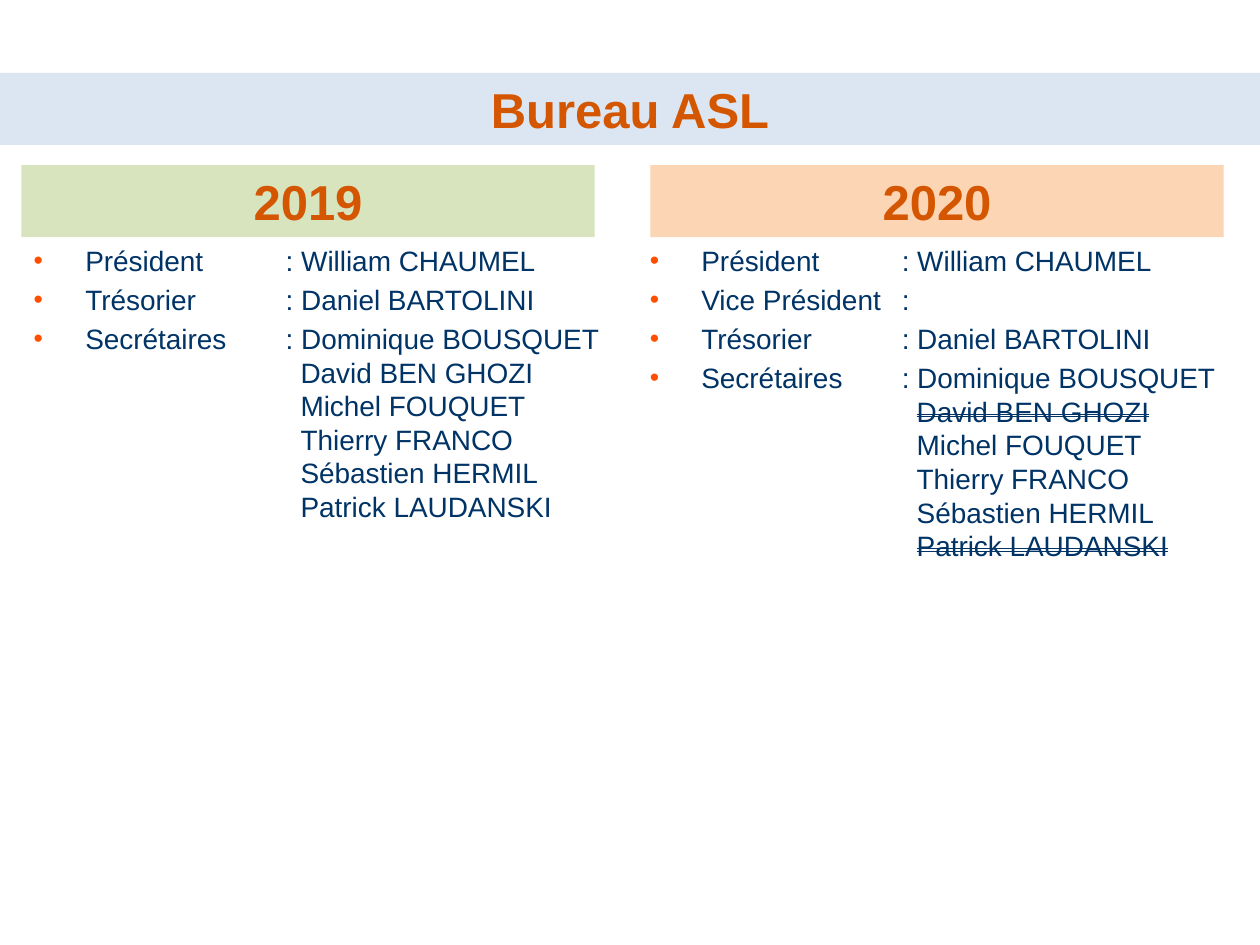
"""Build the slide that sets the 2019 and 2020 ASL boards side by side."""
import dataclasses

import pptx
import pptx.dml.color
import pptx.enum.shapes
import pptx.enum.text
import pptx.oxml
import pptx.oxml.ns
import pptx.util

Cm = pptx.util.Cm
Pt = pptx.util.Pt
Rgb = pptx.dml.color.RGBColor.from_string


@dataclasses.dataclass(frozen=True)
class Theme:
    font: str = "Arial"
    head: str = "D45600"
    body: str = "003366"
    dot: str = "FF4E00"
    blue: str = "DCE6F2"
    green: str = "D7E4BD"
    peach: str = "FCD5B5"
    big: int = 28
    small: int = 16


theme = Theme()


def style(para, size, color, bold=False):
    for run in para.runs:
        run.font.name = theme.font
        run.font.size = Pt(size)
        run.font.bold = bold
        run.font.color.rgb = Rgb(color)


def banner(text, left, top, width, fill):
    shape = slide.shapes.add_shape(
        pptx.enum.shapes.MSO_SHAPE.RECTANGLE, Cm(left), Cm(top), Cm(width), Cm(1.45))
    shape.shadow.inherit = False
    shape.fill.solid()
    shape.fill.fore_color.rgb = Rgb(fill)
    shape.line.fill.background()
    shape.text_frame.text = text
    para = shape.text_frame.paragraphs[0]
    para.alignment = pptx.enum.text.PP_ALIGN.CENTER
    style(para, theme.big, theme.head, True)


deck = pptx.Presentation()
deck.slide_width, deck.slide_height = Cm(25.4), Cm(19.05)
slide = deck.slides.add_slide(deck.slide_layouts[6])

banner("Bureau ASL", 0, 1.47, 25.4, theme.blue)

chair = "Président\t: William CHAUMEL"
vice = "Vice Président\t:"
purse = "Trésorier\t: Daniel BARTOLINI"
clerk = "Secrétaires\t: Dominique BOUSQUET"
team = ["David BEN GHOZI", "Michel FOUQUET", "Thierry FRANCO",
        "Sébastien HERMIL", "Patrick LAUDANSKI"]
boards = [
    ("2019", 0.43, 0.43, 6.15, theme.green, [chair, purse, clerk], []),
    ("2020", 13.11, 12.85, 6.83, theme.peach, [chair, vice, purse, clerk],
     ["David BEN GHOZI", "Patrick LAUDANSKI"]),
]
marks = [
    f'<a:buClr %s><a:srgbClr val="{theme.dot}"/></a:buClr>',
    '<a:buSzPct %s val="95000"/>',
    f'<a:buFont %s typeface="{theme.font}"/>',
    '<a:buChar %s char="•"/>',
]
space = pptx.oxml.ns.nsdecls("a")

for year, left, edge, height, fill, roles, gone in boards:
    banner(year, left, 3.33, 11.56, fill)
    box = slide.shapes.add_textbox(Cm(edge), Cm(4.78), Cm(12.07), Cm(height))
    frame = box.text_frame
    frame.word_wrap = True
    for index, line in enumerate(roles + team):
        para = frame.add_paragraph() if index else frame.paragraphs[0]
        para.text = line
        style(para, theme.small, theme.body)
        props = para._p.get_or_add_pPr()
        if line in team:
            props.set("marL", str(Cm(5.38)))
            props.set("indent", "0")
            para.space_before = Pt(0)
        else:
            props.set("marL", str(Cm(1.04)))
            props.set("indent", str(-Cm(1.04)))
            props.set("defTabSz", str(Cm(2.54)))
            para.space_before = Pt(3.2)
            for mark in marks:
                props.append(pptx.oxml.parse_xml(mark % space))
        if line in gone:
            para.runs[0].font._element.set("strike", "dblStrike")

deck.save("out.pptx")
